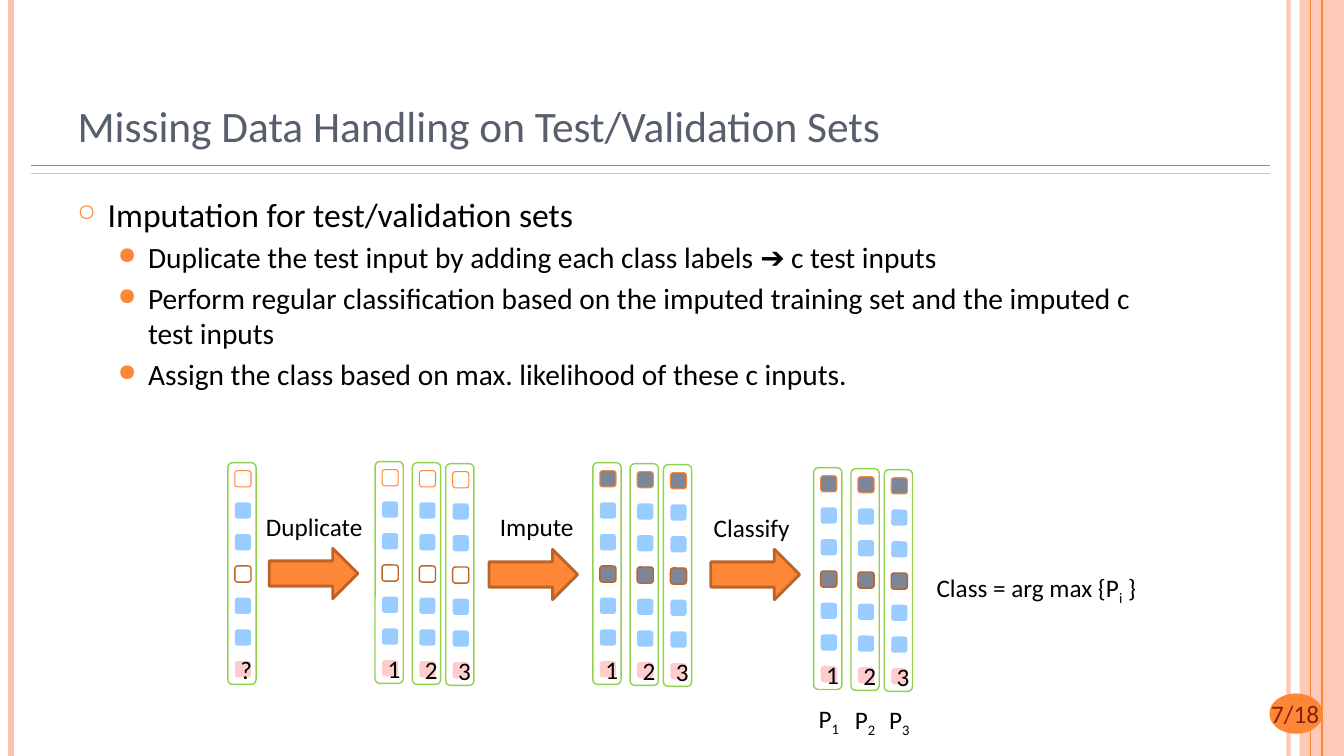
from pptx import Presentation
from pptx.dml.color import RGBColor
from pptx.enum.shapes import MSO_CONNECTOR, MSO_SHAPE
from pptx.enum.text import MSO_ANCHOR, MSO_AUTO_SIZE, PP_ALIGN
from pptx.oxml.ns import qn
from pptx.util import Inches, Pt
from lxml import etree

STRAIGHT = MSO_CONNECTOR.STRAIGHT
ROUNDED = MSO_SHAPE.ROUNDED_RECTANGLE
RECTANGLE = MSO_SHAPE.RECTANGLE
OVAL = MSO_SHAPE.OVAL
RIGHT_ARROW = MSO_SHAPE.RIGHT_ARROW
BOTTOM = MSO_ANCHOR.BOTTOM
NO_AUTOFIT = MSO_AUTO_SIZE.NONE
FIT_SHAPE = MSO_AUTO_SIZE.SHAPE_TO_FIT_TEXT
LEFT = PP_ALIGN.LEFT
CENTER = PP_ALIGN.CENTER

BLACK = RGBColor(0x00, 0x00, 0x00)
SLATE = RGBColor(0x57, 0x5F, 0x6D)
MAROON = RGBColor(0x86, 0x21, 0x10)
ORANGE = RGBColor(0xFE, 0x86, 0x37)
DARK_ORANGE = RGBColor(0xBC, 0x63, 0x29)
VIVID_ORANGE = RGBColor(0xFF, 0x6B, 0x0A)
PALE_ORANGE = RGBColor(0xFE, 0xB6, 0x87)
PEACH = RGBColor(0xFE, 0xC3, 0xAE)
BLUE = RGBColor(0x99, 0xCC, 0xFF)
PINK = RGBColor(0xFF, 0xCC, 0xCC)
GRAY = RGBColor(0x7C, 0x86, 0x96)
GREEN = RGBColor(0x92, 0xD0, 0x50)


def add_box(shapes, kind, bounds, fill=None, line=None, width=1):
    box = shapes.add_shape(kind, *[Inches(value) for value in bounds])
    box.shadow.inherit = False
    if fill is None:
        box.fill.background()
    else:
        box.fill.solid()
        box.fill.fore_color.rgb = fill
    if line is None:
        box.line.fill.background()
    else:
        box.line.color.rgb = line
        box.line.width = Pt(width)
    return box


def add_span(para, text, size=18, color=BLACK):
    span = para.add_run()
    span.text = text
    span.font.name = "Calibri"
    span.font.size = Pt(size)
    span.font.color.rgb = color
    return span


deck = Presentation()
deck.slide_width = Inches(13.33)
deck.slide_height = Inches(7.5)
page = deck.slides.add_slide(deck.slide_layouts[5])

side_band = add_box(page.shapes, RECTANGLE, (12.89, 0, 0.44, 7.5), PEACH)
translucent = [(side_band, 87)]

rules = [
    (12.78, 0, 12.78, 7.5, PEACH, 3),
    (0.11, 0, 0.11, 7.5, PEACH, 4.5),
    (13.11, 0, 13.11, 7.5, ORANGE, 1.5),
    (13, 0, 13, 7.5, ORANGE, 0.75),
    (0.31, 1.64, 12.6, 1.64, VIVID_ORANGE, 1),
    (0.31, 1.72, 12.6, 1.72, PALE_ORANGE, 1),
]
for *ends, color, width in rules:
    rule = page.shapes.add_connector(STRAIGHT, *[Inches(value) for value in ends])
    rule.line.color.rgb = color
    rule.line.width = Pt(width)
    etree.SubElement(rule.element.spPr, qn("a:effectLst"))
    if ends[0] == 12.78:
        translucent.append((rule, 93))

for item, percent in translucent:
    color_tag = item.element.spPr.find(".//" + qn("a:srgbClr"))
    etree.SubElement(color_tag, qn("a:alpha"), val=str(percent * 1000))

add_box(page.shapes, OVAL, (12.59, 6.88, 0.53, 0.4), ORANGE)
number_box = page.shapes.add_textbox(Inches(12.24), Inches(6.88), Inches(1.21), Inches(0.4))
number_box.text_frame.word_wrap = True
number_para = number_box.text_frame.paragraphs[0]
number_para.alignment = CENTER
add_span(number_para, "7/18", 18, MAROON)

title = page.shapes.title
title.left, title.top = Inches(0.67), Inches(0.3)
title.width, title.height = Inches(10.89), Inches(1.25)
title.text_frame.auto_size = NO_AUTOFIT
title.text_frame.vertical_anchor = BOTTOM
title_para = title.text_frame.paragraphs[0]
title_para.alignment = LEFT
add_span(title_para, "Missing Data Handling on Test/Validation Sets", 31, SLATE)

body = page.shapes.add_textbox(Inches(0.67), Inches(1.87), Inches(10.89), Inches(5.21))
body.text_frame.word_wrap = True
points = [
    (0, "Imputation for test/validation sets"),
    (1, "Duplicate the test input by adding each class labels ➔ c test inputs"),
    (1, "Perform regular classification based on the imputed training set "
        "and the imputed c test inputs"),
    (1, "Assign the class based on max. likelihood of these c inputs."),
]
bullet_styles = [("○", 70, 0.3, 24), ("●", 80, 0.7, 21)]
for index, (level, text) in enumerate(points):
    symbol, percent, indent, size = bullet_styles[level]
    para = body.text_frame.add_paragraph() if index else body.text_frame.paragraphs[0]
    para.level = level
    properties = para._p.get_or_add_pPr()
    properties.set("marL", str(Inches(indent)))
    properties.set("indent", str(Inches(-0.3)))
    bullet_color = etree.SubElement(properties, qn("a:buClr"))
    etree.SubElement(bullet_color, qn("a:srgbClr"), val=str(ORANGE))
    etree.SubElement(properties, qn("a:buSzPct"), val=str(percent * 1000))
    etree.SubElement(properties, qn("a:buChar"), char=symbol)
    if index:
        para.space_before = Pt(4)
    add_span(para, text, size)

CELL = 0.16
CELL_STEP = 1.89 / 6
stages = [
    (2.26, 4.59, "?", None),
    (3.72, 4.58, "123", None),
    (5.88, 4.59, "123", GRAY),
    (8.07, 4.64, "123", GRAY),
]
for stage_left, stage_top, labels, imputed in stages:
    cell_styles = [
        (imputed, ORANGE, 0.75),
        (BLUE, None, 1),
        (BLUE, None, 1),
        (imputed, DARK_ORANGE, 1),
        (BLUE, None, 1),
        (BLUE, None, 1),
        (PINK, None, 1),
    ]
    for index, label in enumerate(labels):
        left = stage_left + (0, 0.37, 0.7)[index]
        top = stage_top + 0.01 * index
        column = page.shapes.add_group_shape()
        for row, style in enumerate(cell_styles):
            bounds = (left + 0.07, top + 0.08 + row * CELL_STEP, CELL, CELL)
            cell = add_box(column.shapes, ROUNDED, bounds, *style)
        label_para = cell.text_frame.paragraphs[0]
        label_para.alignment = CENTER
        add_span(label_para, label)
        add_box(column.shapes, ROUNDED, (left, top, 0.28, 2.2), None, GREEN)

for left, top in [(2.67, 5.44), (4.85, 5.45), (7.05, 5.45)]:
    add_box(page.shapes, RIGHT_ARROW, (left, top, 0.88, 0.5), ORANGE, DARK_ORANGE, 2)

captions = [
    (2.54, 5.02, 1.17, ["Duplicate"]),
    (4.86, 5.02, 0.97, ["Impute"]),
    (6.98, 5.03, 0.96, ["Classify"]),
    (8.02, 6.93, 0.42, ["P", "1"]),
    (8.38, 6.94, 0.42, ["P", "2"]),
    (8.72, 6.94, 0.42, ["P", "3"]),
    (9.19, 5.63, 2.21, ["Class = arg max {P", "i", " }"]),
]
for left, top, width, pieces in captions:
    caption = page.shapes.add_textbox(Inches(left), Inches(top), Inches(width), Inches(0.4))
    caption.text_frame.word_wrap = False
    caption.text_frame.auto_size = FIT_SHAPE
    for index, piece in enumerate(pieces):
        span = add_span(caption.text_frame.paragraphs[0], piece)
        if index == 1:
            span.font._element.set("baseline", "-25000")

deck.save("out.pptx")
